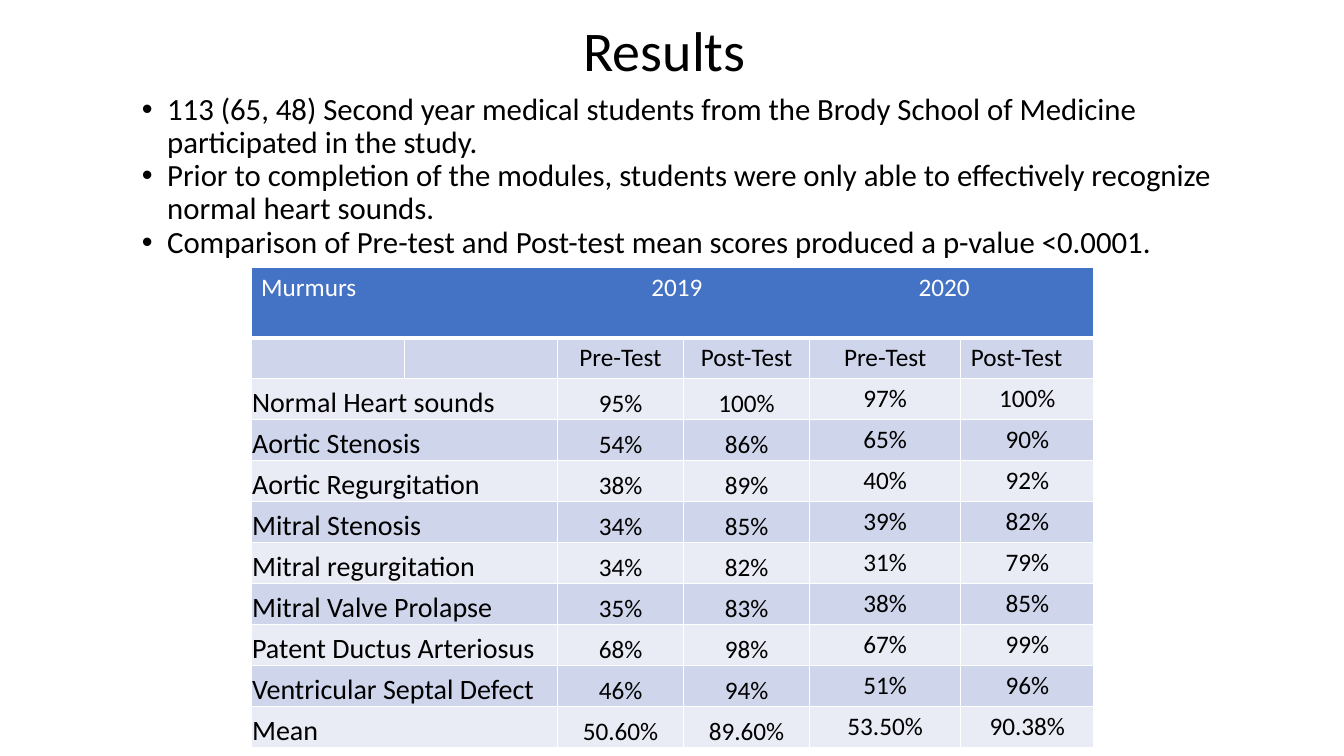
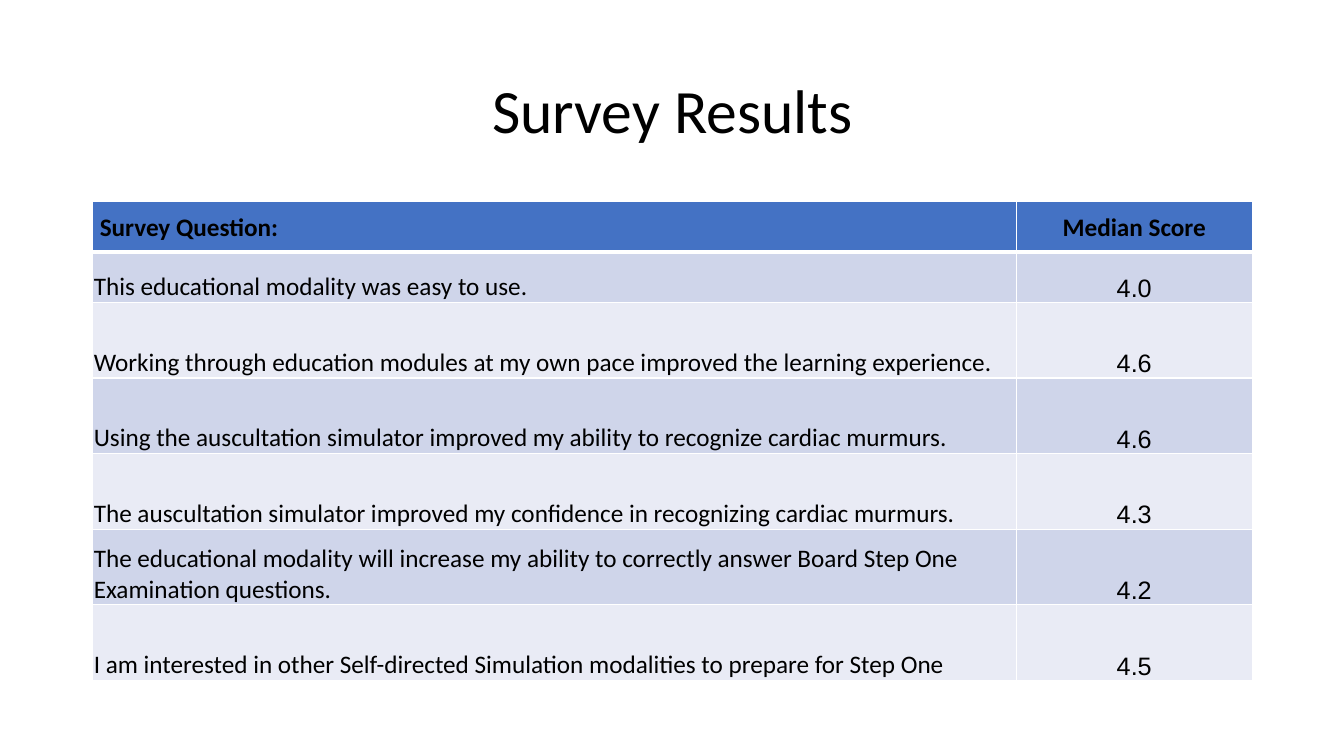
from pptx import Presentation
from pptx.dml.color import RGBColor
from pptx.enum.text import MSO_ANCHOR, PP_ALIGN
from pptx.oxml import parse_xml
from pptx.oxml.ns import nsdecls
from pptx.util import Inches, Pt

BLACK = RGBColor(0x00, 0x00, 0x00)
WHITE = RGBColor(0xFF, 0xFF, 0xFF)
HEAD_BLUE = RGBColor(0x44, 0x72, 0xC4)
BANDS = (RGBColor(0xCF, 0xD5, 0xEA), RGBColor(0xE9, 0xEB, 0xF5))

WIDTH, HEIGHT = 13.33, 7.5
FINDINGS = [
    "113 (65, 48) Second year medical students from the Brody School of Medicine participated in the study.",
    "Prior to completion of the modules, students were only able to effectively recognize normal heart sounds.",
    "Comparison of Pre-test and Post-test mean scores produced a p-value <0.0001.",
]
YEARS_HEAD = "Murmurs\t2019\t2020"
YEAR_TABS = (3.87, 6.52)
TEST_HEADS = ["Pre-Test", "Post-Test"] * 2
SCORES = [
    ("Normal Heart sounds", "95%", "100%", "97%", "100%"),
    ("Aortic Stenosis", "54%", "86%", "65%", "90%"),
    ("Aortic Regurgitation", "38%", "89%", "40%", "92%"),
    ("Mitral Stenosis", "34%", "85%", "39%", "82%"),
    ("Mitral regurgitation", "34%", "82%", "31%", "79%"),
    ("Mitral Valve Prolapse", "35%", "83%", "38%", "85%"),
    ("Patent Ductus Arteriosus", "68%", "98%", "67%", "99%"),
    ("Ventricular Septal Defect", "46%", "94%", "51%", "96%"),
    ("Mean", "50.60%", "89.60%", "53.50%", "90.38%"),
]
SURVEY_HEADS = ("Survey Question:", "Median Score")
SURVEY = [
    ("This educational modality was easy to use.", "4.0"),
    ("Working through education modules at my own pace improved the learning experience.", "4.6"),
    ("Using the auscultation simulator improved my ability to recognize cardiac murmurs.", "4.6"),
    ("The auscultation simulator improved my confidence in recognizing cardiac murmurs.", "4.3"),
    ("The educational modality will increase my ability to correctly answer Board Step One "
     "Examination questions.", "4.2"),
    ("I am interested in other Self-directed Simulation modalities to prepare for Step One", "4.5"),
]

ROOMY = {"insets": (0.1, 0.05, 0.1, 0.05), "anchor": MSO_ANCHOR.TOP}
TIGHT = {"insets": (0.01, 0.01, 0.01, 0), "anchor": MSO_ANCHOR.BOTTOM}
SURVEY_HEAD = {"insets": (0.07, 0, 0.07, 0), "anchor": MSO_ANCHOR.MIDDLE}
CENTER = {"alignment": PP_ALIGN.CENTER}
SIDES = ("left", "top", "right", "bottom")


def write(p, text, para=None, color=BLACK, **font):
    for name, value in (para or {}).items():
        setattr(p, name, value)
    r = p.add_run()
    r.text = text
    r.font.color.rgb = color
    for name, value in ({"name": "Calibri", "size": Pt(18), "bold": False} | font).items():
        setattr(r.font, name, value)


def add_text(slide, box, lines, size, para=None, anchor=MSO_ANCHOR.TOP, bullet=False):
    tf = slide.shapes.add_textbox(*map(Inches, box)).text_frame
    tf.word_wrap = True
    tf.vertical_anchor = anchor
    for i, line in enumerate(lines):
        p = tf.add_paragraph() if i else tf.paragraphs[0]
        if bullet:
            pPr = p._p.get_or_add_pPr()
            pPr.set("marL", str(Inches(0.25)))
            pPr.set("indent", str(-Inches(0.25)))
            pPr.append(parse_xml(f'<a:buFont {nsdecls("a")} typeface="Arial"/>'))
            pPr.append(parse_xml(f'<a:buChar {nsdecls("a")} char="•"/>'))
        write(p, line, para, size=Pt(size))


def add_table(slide, left, top, cols, rows):
    sp = slide.shapes.add_table(len(rows), len(cols), *map(Inches, (left, top, sum(cols), sum(rows))))
    table = sp.table
    for col, width in zip(table.columns, cols):
        col.width = Inches(width)
    for i, (row, height) in enumerate(zip(table.rows, rows)):
        row.height = Inches(height)
        for cell in row.cells:
            tcPr = cell._tc.get_or_add_tcPr()
            for side in "LRTB":
                weight = Pt(3 if i == 0 and side == "B" else 1)
                tcPr.append(parse_xml(
                    f'<a:ln{side} {nsdecls("a")} w="{weight}"><a:solidFill>'
                    f'<a:srgbClr val="{WHITE}"/></a:solidFill></a:ln{side}>'))
            cell.fill.solid()
            cell.fill.fore_color.rgb = BANDS[(i - 1) % 2] if i else HEAD_BLUE
    return table


def fill_cell(cell, text, layout, para=None, **font):
    for side, inset in zip(SIDES, layout["insets"]):
        setattr(cell, f"margin_{side}", Inches(inset))
    cell.vertical_anchor = layout["anchor"]
    write(cell.text_frame.paragraphs[0], text, para, **font)


def build_results(slide):
    add_text(slide, (5.69, 0.11, 2.75, 0.77), ["Results"], 40)
    add_text(slide, (1.31, 0.88, 11.5, 4.76), FINDINGS, 22, {"line_spacing": 0.9}, bullet=True)
    row_height = (HEIGHT - 0.08 - 2.65 - 0.7) / (len(SCORES) + 1)
    table = add_table(slide, 2.49, 2.65, (1.52, 1.52, 1.25, 1.25, 1.5, 1.32),
                      [0.7] + [row_height] * (len(SCORES) + 1))
    head = table.cell(0, 0)
    head.merge(table.cell(0, 5))
    stops = "".join(f'<a:tab pos="{Inches(x)}" algn="l"/>' for x in YEAR_TABS)
    head.text_frame.paragraphs[0]._p.get_or_add_pPr().append(
        parse_xml(f'<a:tabLst {nsdecls("a")}>{stops}</a:tabLst>'))
    fill_cell(head, YEARS_HEAD, ROOMY, color=WHITE)
    for c, text in enumerate(TEST_HEADS, 2):
        fill_cell(table.cell(1, c), text, ROOMY, CENTER if c < 5 else None)
    for i, (murmur, *scores) in enumerate(SCORES, 2):
        table.cell(i, 0).merge(table.cell(i, 1))
        fill_cell(table.cell(i, 0), murmur, TIGHT, size=Pt(20))
        for c, score in enumerate(scores, 2):
            fill_cell(table.cell(i, c), score, TIGHT if c < 4 else ROOMY, CENTER)


def build_survey(slide):
    add_text(slide, (0.92, 0.4, 11.5, 1.45), ["Survey Results"], 44,
             CENTER | {"line_spacing": 0.9}, MSO_ANCHOR.MIDDLE)
    table = add_table(slide, 0.92, 2, (9.16, 2.34), [0.5] * 2 + [0.75] * (len(SURVEY) - 1))
    for c, (text, para) in enumerate(zip(SURVEY_HEADS, ({}, CENTER))):
        fill_cell(table.cell(0, c), text, SURVEY_HEAD, para | {"line_spacing": 1.07}, bold=True)
    for i, (question, score) in enumerate(SURVEY, 1):
        fill_cell(table.cell(i, 0), question, TIGHT)
        fill_cell(table.cell(i, 1), score, TIGHT, CENTER, name="Arial")


def main():
    prs = Presentation()
    prs.slide_width, prs.slide_height = Inches(WIDTH), Inches(HEIGHT)
    for build in (build_results, build_survey):
        build(prs.slides.add_slide(prs.slide_layouts[6]))
    prs.save("out.pptx")


if __name__ == "__main__":
    main()
